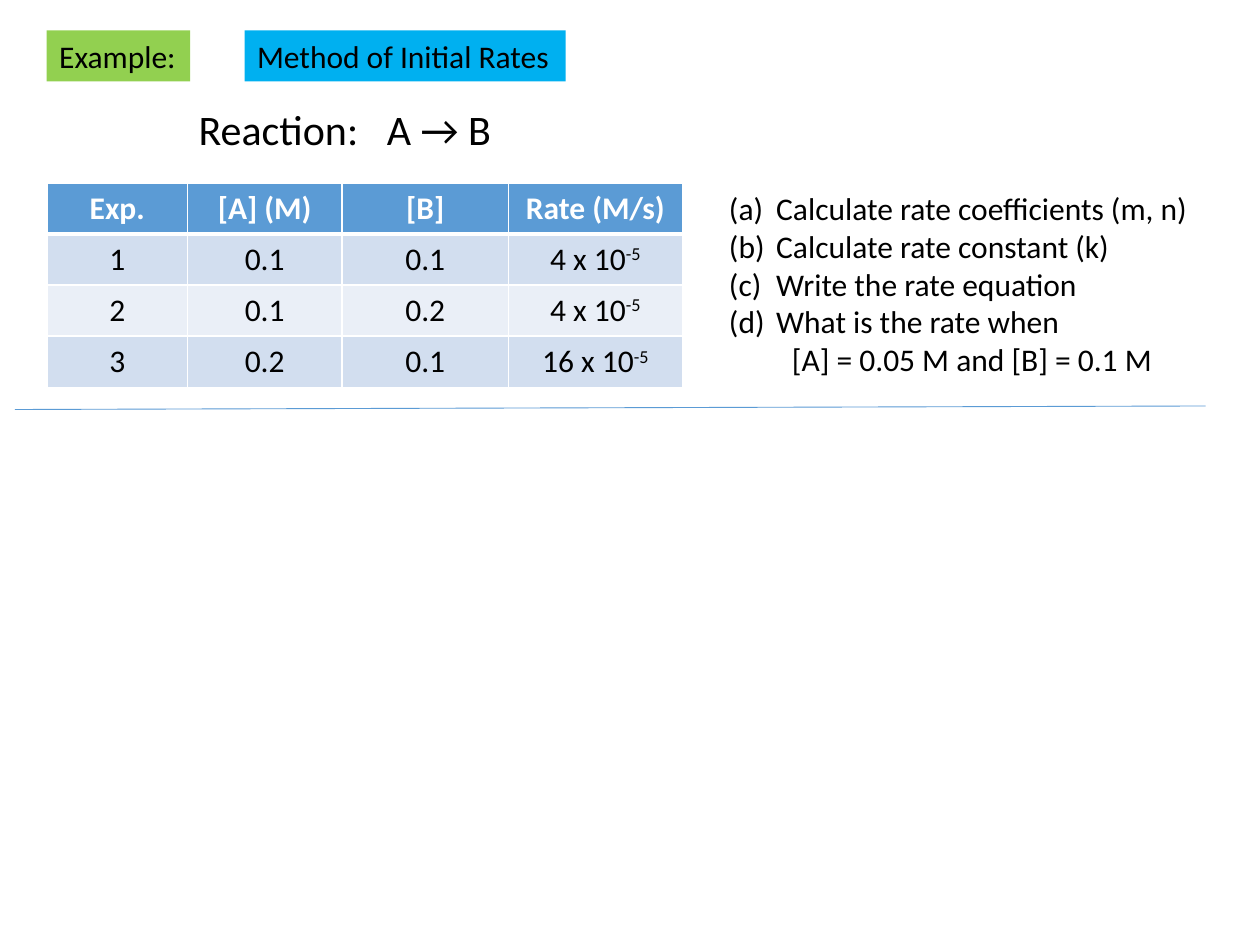
import pptx
import pptx.dml.color
import pptx.enum.shapes
import pptx.enum.text
import pptx.oxml
import pptx.oxml.ns
import pptx.util
from lxml import etree

Pt = pptx.util.Pt
RGB = pptx.dml.color.RGBColor
BLACK = RGB(0, 0, 0)
WHITE = RGB(255, 255, 255)
BLUE = RGB(0x5B, 0x9B, 0xD5)
BAND_DARK = RGB(0xD2, 0xDE, 0xEF)
BAND_LIGHT = RGB(0xEA, 0xEF, 0xF7)
GREEN = RGB(0x92, 0xD0, 0x50)
CYAN = RGB(0, 0xB0, 0xF0)

COLUMN_WIDTHS = (80, 88.5, 95, 99.5)
ROW_HEIGHT = 29.2
HEADERS = ("Exp.", "[A] (M)", "[B]", "Rate (M/s)")
EXPERIMENTS = (
    ("1", "0.1", "0.1", "4 x 10"),
    ("2", "0.1", "0.2", "4 x 10"),
    ("3", "0.2", "0.1", "16 x 10"),
)
EXPONENT = "-5"
QUESTIONS = (
    "Calculate rate coefficients (m, n)",
    "Calculate rate constant (k)",
    "Write the rate equation",
    "What is the rate when",
)


def add_run(p, text, size=18, color=BLACK, bold=False):
    """Append a Calibri run to a paragraph and return it."""
    r = p.add_run()
    r.text = text
    r.font.name = "Calibri"
    r.font.size = Pt(size)
    r.font.bold = bold
    r.font.color.rgb = color
    return r


def set_tab(p, position):
    """Give a paragraph one left tab stop."""
    tabs = etree.SubElement(p._p.get_or_add_pPr(), pptx.oxml.ns.qn("a:tabLst"))
    etree.SubElement(tabs, pptx.oxml.ns.qn("a:tab"), pos=str(Pt(position)), algn="l")


def set_lettering(p, indent):
    """Number a paragraph as (a), (b), (c) with a hanging indent."""
    pPr = p._p.get_or_add_pPr()
    pPr.set("marL", str(Pt(indent)))
    pPr.set("indent", str(-Pt(indent)))
    etree.SubElement(pPr, pptx.oxml.ns.qn("a:buFont"), typeface="+mj-lt")
    etree.SubElement(pPr, pptx.oxml.ns.qn("a:buAutoNum"), type="alphaLcParenBoth")


def add_text_box(s, left, top, width, height, fill=None):
    """Add an unwrapped text box, filled if asked, and return its frame."""
    sp = s.shapes.add_textbox(Pt(left), Pt(top), Pt(width), Pt(height))
    if fill is not None:
        sp.fill.solid()
        sp.fill.fore_color.rgb = fill
    tf = sp.text_frame
    tf.word_wrap = False
    tf.auto_size = pptx.enum.text.MSO_AUTO_SIZE.SHAPE_TO_FIT_TEXT
    return tf


def add_label(s, left, width, text, fill):
    """Add a coloured heading label at the top of the slide."""
    tf = add_text_box(s, left, 17.4, width, 29.1, fill)
    add_run(tf.paragraphs[0], text)


def add_reaction(s):
    """Add the reaction line."""
    p = add_text_box(s, 106.5, 55.5, 183, 36.4).paragraphs[0]
    set_tab(p, 107.5)
    add_run(p, "Reaction:\tA → B", 24)


def set_borders(cell, top, bottom):
    """Draw white borders around a cell."""
    tcPr = cell._tc.get_or_add_tcPr()
    for side, width in (("L", 1), ("R", 1), ("T", top), ("B", bottom)):
        tcPr.append(pptx.oxml.parse_xml(
            f'<a:ln{side} {pptx.oxml.ns.nsdecls("a")} w="{Pt(width)}">'
            f'<a:solidFill><a:srgbClr val="{WHITE}"/></a:solidFill></a:ln{side}>'))


def add_rate_table(s):
    """Add the table of experiments and initial rates."""
    rows = (HEADERS,) + EXPERIMENTS
    table = s.shapes.add_table(
        len(rows), len(HEADERS), Pt(27), Pt(104.5),
        Pt(sum(COLUMN_WIDTHS)), Pt(ROW_HEIGHT * len(rows))).table
    for column, width in zip(table.columns, COLUMN_WIDTHS):
        column.width = Pt(width)
    for i, values in enumerate(rows):
        table.rows[i].height = Pt(ROW_HEIGHT)
        header = i == 0
        band = BAND_DARK if i % 2 else BAND_LIGHT
        for j, value in enumerate(values):
            cell = table.cell(i, j)
            set_borders(cell, 3 if i == 1 else 1, 3 if header else 1)
            cell.fill.solid()
            cell.fill.fore_color.rgb = BLUE if header else band
            p = cell.text_frame.paragraphs[0]
            p.alignment = pptx.enum.text.PP_ALIGN.CENTER
            add_run(p, value, color=WHITE if header else BLACK, bold=header)
            if not header and j == len(HEADERS) - 1:
                r = add_run(p, EXPONENT)
                r.font._element.set("baseline", "30000")


def add_questions(s):
    """Add the lettered questions and the closing condition."""
    tf = add_text_box(s, 409.5, 104.5, 280, 116.4)
    for i, question in enumerate(QUESTIONS):
        p = tf.add_paragraph() if i else tf.paragraphs[0]
        set_lettering(p, 27)
        add_run(p, question)
    p = tf.add_paragraph()
    set_tab(p, 36)
    add_run(p, "\t[A] = 0.05 M and [B] = 0.1 M")


def add_divider(s):
    """Add the thin line under the problem."""
    line = s.shapes.add_connector(
        pptx.enum.shapes.MSO_CONNECTOR.STRAIGHT,
        Pt(8.5), Pt(234), Pt(689), Pt(232))
    line.line.color.rgb = BLUE
    line.line.width = Pt(0.5)
    etree.SubElement(line._element.spPr, pptx.oxml.ns.qn("a:effectLst"))


def main():
    """Build and save the slide."""
    prs = pptx.Presentation()
    prs.slide_width, prs.slide_height = Pt(720), Pt(540)
    s = prs.slides.add_slide(prs.slide_layouts[6])
    add_rate_table(s)
    add_reaction(s)
    add_label(s, 26.7, 82, "Example:", GREEN)
    add_label(s, 139.8, 183.5, "Method of Initial Rates", CYAN)
    add_divider(s)
    add_questions(s)
    prs.save("out.pptx")


if __name__ == "__main__":
    main()
